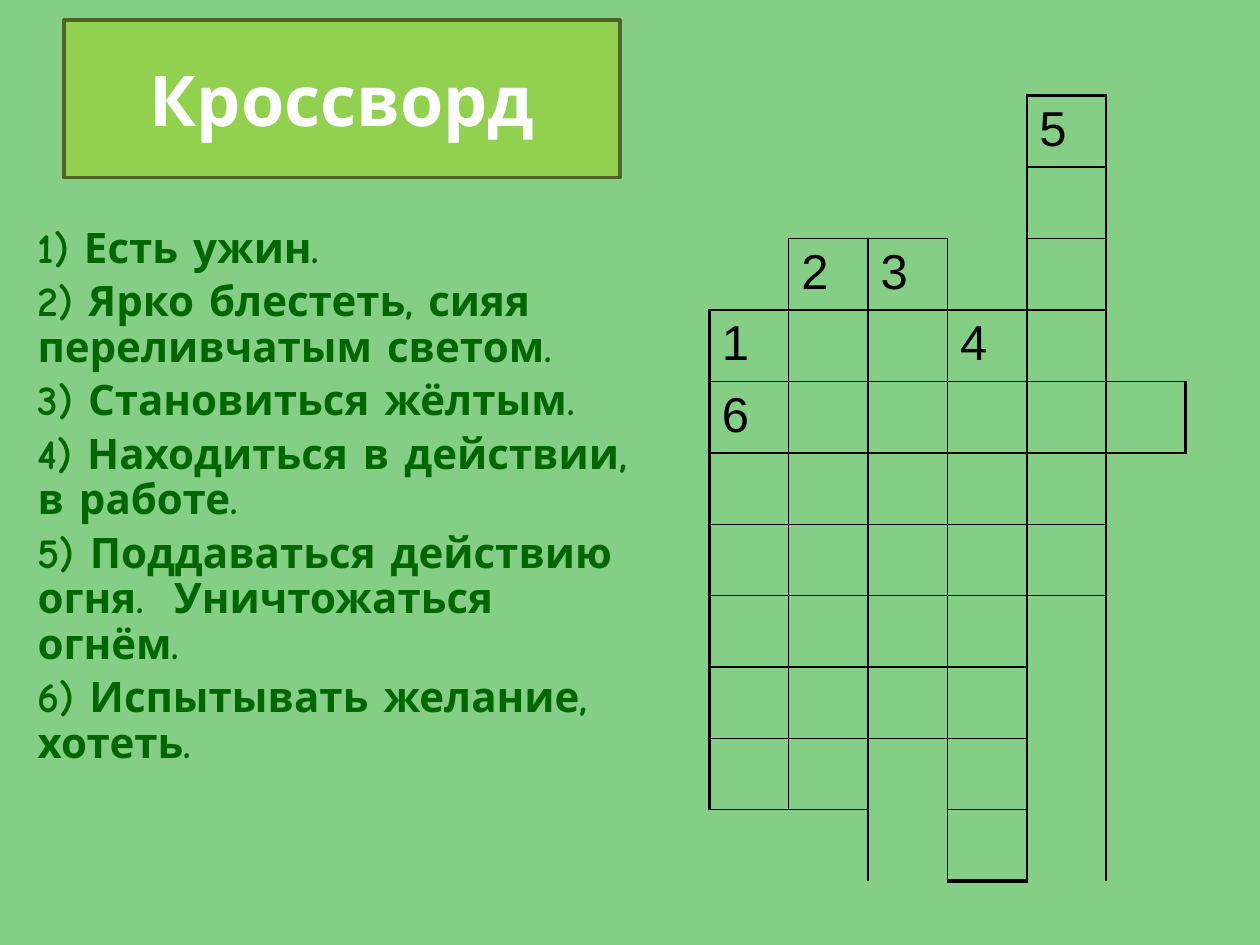
"""Build a crossword slide with its clues and grid."""
import pptx
import pptx.util
import pptx.dml.color
import pptx.enum.text
import pptx.oxml
import pptx.oxml.ns

Inches = pptx.util.Inches
Pt = pptx.util.Pt
RGBColor = pptx.dml.color.RGBColor
MID = pptx.enum.text.MSO_ANCHOR.MIDDLE
MSO_FIT = pptx.enum.text.MSO_AUTO_SIZE
CENTER = pptx.enum.text.PP_ALIGN.CENTER

BACK = RGBColor(0x85, 0xCE, 0x85)
LIME = RGBColor(0x92, 0xD0, 0x50)
OLIVE = RGBColor(0x4F, 0x62, 0x28)
GREEN = RGBColor(0x00, 0x66, 0x00)
WHITE = RGBColor(0xFF, 0xFF, 0xFF)
BLACK = RGBColor(0x00, 0x00, 0x00)

HEAD = {"name": "Comic Neue", "size": Pt(40), "bold": True}
CLUE = {"name": "Comic Neue", "size": Pt(24), "bold": True}
DIGIT = {"name": "Arial", "size": Pt(28), "bold": False}
PLAIN = "{2D5ABB26-0587-4C30-8999-92F81FD0307C}"
NS = pptx.oxml.ns.nsdecls("a")
ROWS, COLS = 11, 6
THIN, THICK = 1, 2.25

CLUES = [
    "1) Есть ужин.",
    "2) Ярко блестеть, сияя переливчатым светом.",
    "3) Становиться жёлтым.",
    "4) Находиться в действии, в работе.",
    "5) Поддаваться действию огня.  Уничтожаться огнём.",
    "6) Испытывать желание, хотеть.",
]
MARKS = {(0, 4): "5", (2, 1): "2", (2, 2): "3", (3, 0): "1", (3, 3): "4", (4, 0): "6"}
GAPS = {
    (0, 0): (3, 1, "B"),
    (0, 1): (2, 1, "B"),
    (0, 2): (2, 1, "B"),
    (0, 3): (3, 1, "RB"),
    (0, 5): (4, 1, "LB"),
    (5, 5): (6, 1, "LT"),
    (7, 4): (4, 1, "LT"),
    (9, 2): (2, 1, "LTR"),
    (10, 0): (1, 2, "T"),
}
BOLD = {(0, 4): "T", (4, 5): "R", (10, 3): "B"}
BOLD.update({(row, 0): "L" for row in range(3, 10)})


class Deck:
    """Hold the style and the current slide."""

    def __init__(self):
        self.file = pptx.Presentation()
        self.file.slide_width, self.file.slide_height = Inches(10), Inches(7.5)
        self.slide = self.file.slides.add_slide(self.file.slide_layouts[5])
        fill = self.slide.background.fill
        fill.solid()
        fill.fore_color.rgb = BACK

    def style(self, font, form, color):
        for key, value in form.items():
            setattr(font, key, value)
        font.color.rgb = color

    def title(self, text, *box):
        head = self.slide.shapes.title
        head.left, head.top, head.width, head.height = map(Inches, box)
        head._element.spPr.append(pptx.oxml.parse_xml(
            f'<a:prstGeom {NS} prst="roundRect"><a:avLst/></a:prstGeom>'))
        head.fill.solid()
        head.fill.fore_color.rgb = LIME
        head.line.color.rgb = OLIVE
        head.line.width = Pt(2)
        frame = head.text_frame
        frame.text = text
        frame.auto_size = MSO_FIT.NONE
        frame.vertical_anchor = MID
        para = frame.paragraphs[0]
        para.alignment = CENTER
        self.style(para.runs[0].font, HEAD, WHITE)

    def clues(self, lines, *box):
        frame = self.slide.shapes.add_textbox(*map(Inches, box)).text_frame
        frame.word_wrap = True
        frame.text = "\n".join(lines)
        for para in frame.paragraphs:
            para.line_spacing = 0.9
            para.space_before = Pt(4.8)
            self.style(para.runs[0].font, CLUE, GREEN)

    def edge(self, cell, sides, bold):
        props = cell._tc.get_or_add_tcPr()
        for side in "LRTB":
            if side in sides:
                width = Pt(THICK if side in bold else THIN)
                props.append(pptx.oxml.parse_xml(
                    f'<a:ln{side} {NS} w="{width}"><a:solidFill>'
                    f'<a:srgbClr val="{BLACK}"/></a:solidFill></a:ln{side}>'))

    def grid(self, *box):
        shape = self.slide.shapes.add_table(ROWS, COLS, *map(Inches, box))
        table = shape.table
        table.first_row = table.horz_banding = False
        table._tbl.tblPr.find(pptx.oxml.ns.qn("a:tableStyleId")).text = PLAIN
        for (row, col), (high, wide, _) in GAPS.items():
            end = table.cell(row + high - 1, col + wide - 1)
            table.cell(row, col).merge(end)
        for row in range(ROWS):
            for col in range(COLS):
                cell, spot = table.cell(row, col), (row, col)
                if not cell.is_spanned:
                    sides = GAPS[spot][2] if spot in GAPS else "LRTB"
                    self.edge(cell, sides, BOLD.get(spot, ""))
                cell.fill.background()
                if spot in MARKS:
                    cell.text = MARKS[spot]
                    self.style(cell.text_frame.paragraphs[0].runs[0].font, DIGIT, BLACK)


def main():
    deck = Deck()
    deck.clues(CLUES, 0.2, 1.75, 4.96, 5.31)
    deck.grid(5.63, 0.76, 3.78, 6.23)
    deck.title("Кроссворд", 0.51, 0.16, 4.41, 1.25)
    deck.file.save("out.pptx")


if __name__ == "__main__":
    main()
